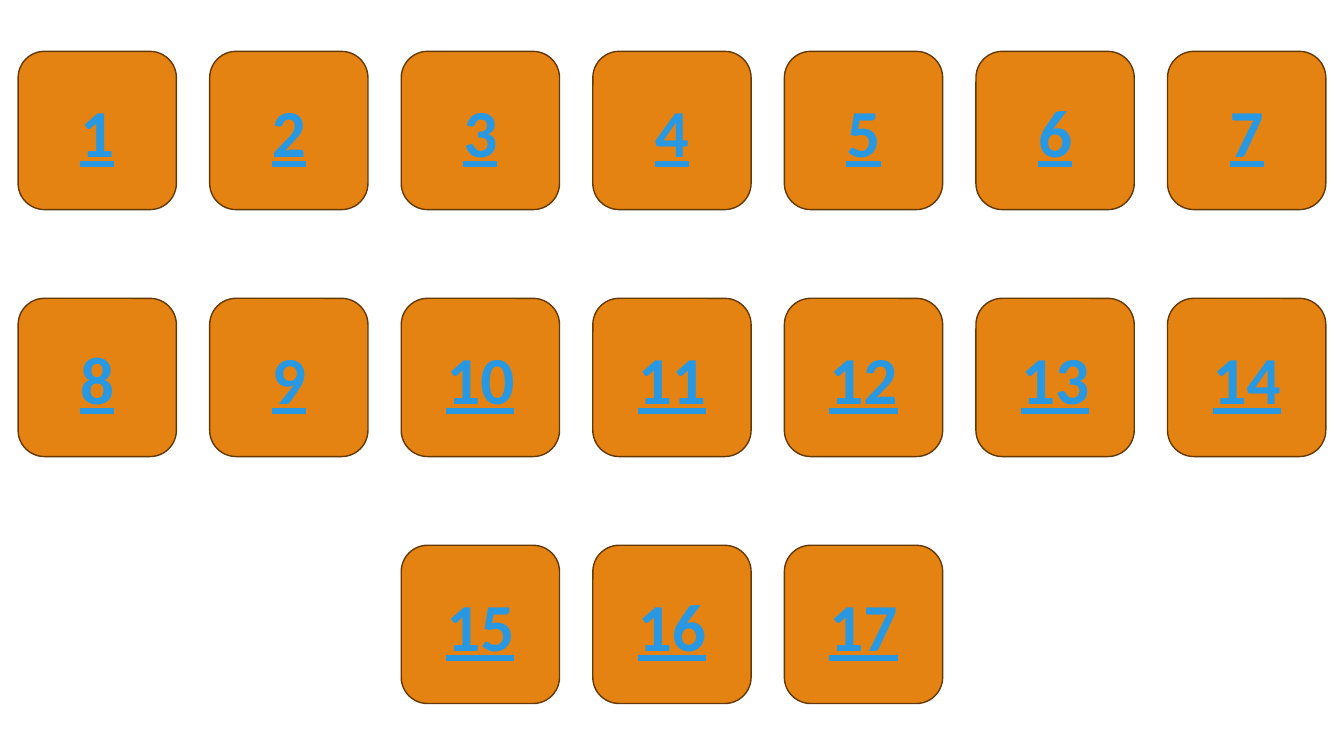
from dataclasses import dataclass

from pptx import Presentation
from pptx.dml.color import RGBColor
from pptx.enum.shapes import MSO_SHAPE
from pptx.enum.text import MSO_ANCHOR, PP_ALIGN
from pptx.util import Pt

ROUNDED = MSO_SHAPE.ROUNDED_RECTANGLE
MIDDLE = MSO_ANCHOR.MIDDLE
CENTER = PP_ALIGN.CENTER

NUMBER_ROWS = [
    ["1", "2", "3", "4", "5", "6", "7"],
    ["8", "9", "10", "11", "12", "13", "14"],
    ["15", "16", "17"],
]


@dataclass(frozen=True)
class Theme:
    tile: RGBColor = RGBColor.from_string("E48312")
    border: RGBColor = RGBColor.from_string("643908")
    number: RGBColor = RGBColor.from_string("2998E3")
    border_width: int = Pt(1)
    number_size: int = Pt(48)
    font: str = "Calibri"


THEME = Theme()
NUMBER_FORMAT = {
    "name": THEME.font,
    "size": THEME.number_size,
    "bold": True,
    "underline": True,
}

EMU_PER_PX = 9144
SLIDE_WIDTH, SLIDE_HEIGHT = 1333, 750
TILE_SIZE = 157
COLUMN_STEP, ROW_STEP = 190, 245
FIRST_TOP = 51
BLANK_LAYOUT = 6


def px(length):
    return round(length * EMU_PER_PX)


def add_tile(slide, number, left, top):
    tile = slide.shapes.add_shape(
        ROUNDED, px(left), px(top), px(TILE_SIZE), px(TILE_SIZE)
    )
    tile.shadow.inherit = False
    tile.fill.solid()
    tile.fill.fore_color.rgb = THEME.tile
    tile.line.color.rgb = THEME.border
    tile.line.width = THEME.border_width
    tile.text_frame.vertical_anchor = MIDDLE
    label = tile.text_frame.paragraphs[0]
    label.alignment = CENTER
    digits = label.add_run()
    digits.text = number
    for attribute, value in NUMBER_FORMAT.items():
        setattr(digits.font, attribute, value)
    digits.font.color.rgb = THEME.number


def main():
    deck = Presentation()
    deck.slide_width, deck.slide_height = px(SLIDE_WIDTH), px(SLIDE_HEIGHT)
    board = deck.slides.add_slide(deck.slide_layouts[BLANK_LAYOUT])
    for row, numbers in enumerate(NUMBER_ROWS):
        row_width = TILE_SIZE + (len(numbers) - 1) * COLUMN_STEP
        row_left = (SLIDE_WIDTH - row_width) / 2
        for column, number in enumerate(numbers):
            add_tile(
                board,
                number,
                row_left + column * COLUMN_STEP,
                FIRST_TOP + row * ROW_STEP,
            )
    deck.save("out.pptx")


if __name__ == "__main__":
    main()
